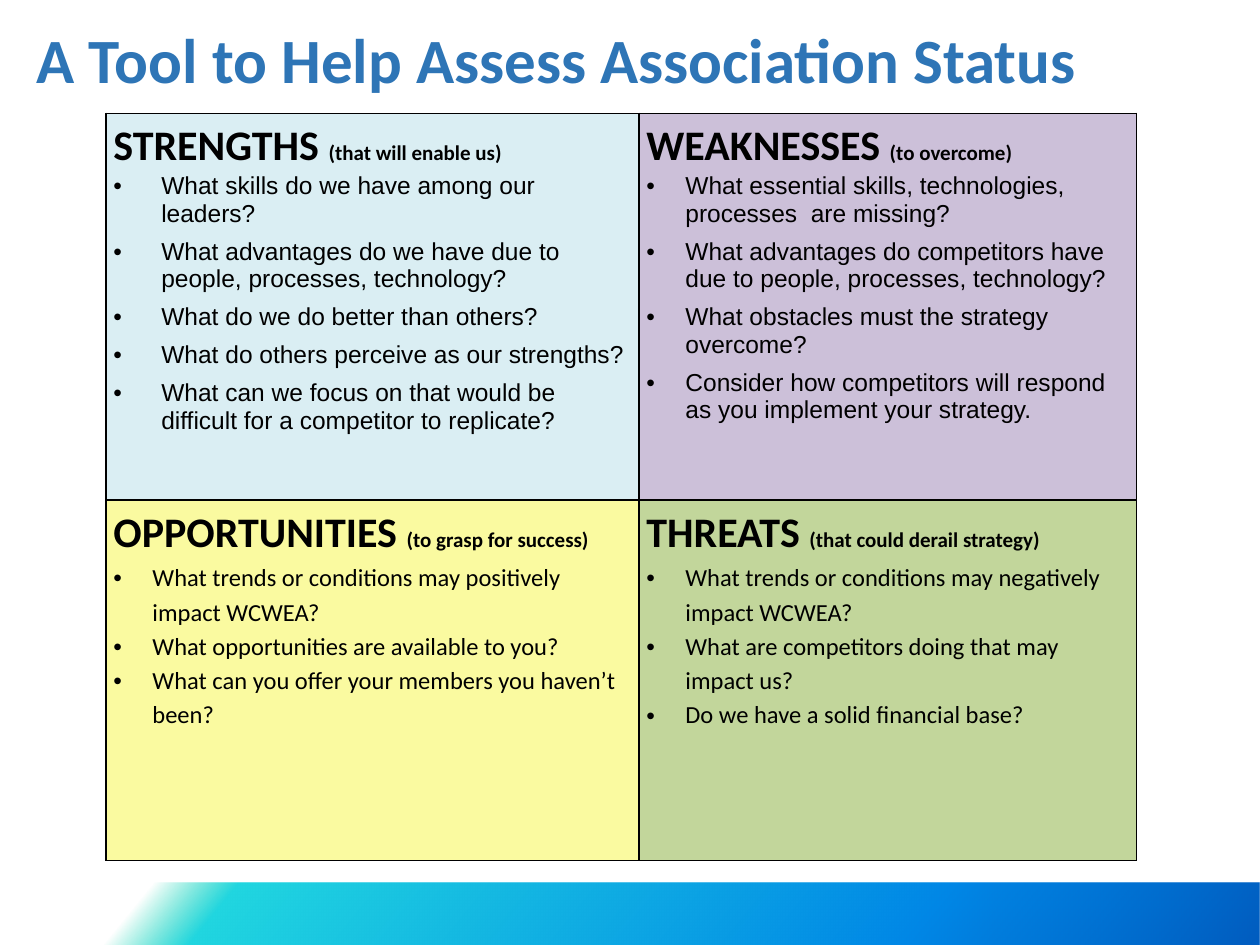
"""Build a four-quadrant SWOT slide for assessing association status."""
from dataclasses import dataclass

from lxml.etree import SubElement
from pptx import Presentation
from pptx.dml.color import RGBColor as Rgb
from pptx.enum.shapes import MSO_SHAPE as Shape
from pptx.enum.text import MSO_ANCHOR as Anchor, PP_ALIGN as Align
from pptx.oxml import parse_xml
from pptx.oxml.ns import nsdecls, qn
from pptx.util import Inches, Pt

COLORS = {
    "title": "2E75B6", "text": "000000", "border": "000000",
    "strengths": "DAEEF3", "weaknesses": "CCC0D9",
    "opportunities": "FAFAA0", "threats": "C2D69B",
}
BAND_STOPS = [(19, "03D4A8", 0), (25, "21D6E0", 100), (75, "0087E6", 100), (100, "005CBF", 100)]
BAND_ANGLE = 40
COLUMN_WIDTHS = [4.23, 3.95]
ROW_HEIGHTS = [3.07, 2.86]
INTERNAL = {"font": "Arial", "spacing": {"space_after": Pt(6)}}
EXTERNAL = {"font": "Calibri", "spacing": {"line_spacing": 1.15}}


@dataclass
class Quadrant:
    """One SWOT cell with its heading, aside and questions."""
    heading: str
    aside: str
    questions: list[str]
    style: dict
    indent: float = 0.31


QUADRANTS = [
    [
        Quadrant("STRENGTHS", "(that will enable us)", [
            "What skills do we have among our leaders?",
            "What advantages do we have due to people, processes, technology?",
            "What do we do better than others?",
            "What do others perceive as our strengths?",
            "What can we focus on that would be difficult for a competitor to replicate?",
        ], INTERNAL, 0.38),
        Quadrant("WEAKNESSES", "(to overcome)", [
            "What essential skills, technologies, processes  are missing?",
            "What advantages do competitors have due to people, processes, technology?",
            "What obstacles must the strategy overcome?",
            "Consider how competitors will respond as you implement your strategy.",
        ], INTERNAL),
    ],
    [
        Quadrant("OPPORTUNITIES", "(to grasp for success)", [
            "What trends or conditions may positively impact WCWEA?",
            "What opportunities are available to you?",
            "What can you offer your members you haven’t been?",
        ], EXTERNAL),
        Quadrant("THREATS", "(that could derail strategy)", [
            "What trends or conditions may negatively impact WCWEA?",
            "What are competitors doing that may impact us?",
            "Do we have a solid financial base?",
        ], EXTERNAL),
    ],
]


def set_all(target, values: dict) -> None:
    """Set every named attribute on the target."""
    for name, value in values.items():
        setattr(target, name, value)


def add_run(paragraph, text: str, size: int, bold: bool,
            font: str = "Calibri", color: str = "text") -> None:
    """Append a formatted run."""
    run = paragraph.add_run()
    run.text = text
    set_all(run.font, {"size": Pt(size), "bold": bold, "name": font})
    run.font.color.rgb = Rgb.from_string(COLORS[color])


def add_bullet(paragraph, indent: float) -> None:
    """Give the paragraph a hanging round bullet."""
    properties = paragraph._p.get_or_add_pPr()
    properties.set("marL", str(Inches(indent)))
    properties.set("indent", str(-Inches(indent)))
    SubElement(properties, qn("a:buFont"), typeface="Arial")
    SubElement(properties, qn("a:buChar"), char="•")


def add_borders(cell) -> None:
    """Outline all four sides of the cell."""
    properties = cell._tc.get_or_add_tcPr()
    for position, side in enumerate("LRTB"):
        properties.insert(position, parse_xml(
            f'<a:ln{side} {nsdecls("a")} w="{Pt(1)}"><a:solidFill>'
            f'<a:srgbClr val="{COLORS["border"]}"/></a:solidFill></a:ln{side}>'))


def fill_quadrant(cell, quadrant: Quadrant) -> None:
    """Write one quadrant into its table cell."""
    set_all(cell, {"margin_left": Inches(0.06), "margin_right": Inches(0.06),
                   "margin_top": 0, "margin_bottom": 0, "vertical_anchor": Anchor.TOP})
    cell.fill.solid()
    cell.fill.fore_color.rgb = Rgb.from_string(COLORS[quadrant.heading.lower()])
    add_borders(cell)
    heading = cell.text_frame.paragraphs[0]
    heading.line_spacing = 1.15
    add_run(heading, f"{quadrant.heading} ", 24, True)
    add_run(heading, quadrant.aside, 12, True)
    for question in quadrant.questions:
        paragraph = cell.text_frame.add_paragraph()
        set_all(paragraph, quadrant.style["spacing"])
        add_bullet(paragraph, quadrant.indent)
        add_run(paragraph, question, 14, False, quadrant.style["font"])


def add_band(slide) -> None:
    """Draw the fading gradient band along the foot of the slide."""
    band = slide.shapes.add_shape(
        Shape.RECTANGLE, Inches(-0.93), Inches(7.01), Inches(10.93), Inches(0.5))
    band.shadow.inherit = False
    band.line.fill.background()
    stops = "".join(
        f'<a:gs pos="{position * 1000}"><a:srgbClr val="{color}">'
        f'<a:alpha val="{opacity * 1000}"/></a:srgbClr></a:gs>'
        for position, color, opacity in BAND_STOPS)
    band._element.spPr.find(qn("a:prstGeom")).addnext(parse_xml(
        f'<a:gradFill {nsdecls("a")} rotWithShape="1"><a:gsLst>{stops}</a:gsLst>'
        f'<a:lin ang="{BAND_ANGLE * 60000}" scaled="0"/></a:gradFill>'))


def add_title(slide, text: str) -> None:
    """Place and format the slide title."""
    title = slide.shapes.title
    set_all(title, {"left": Inches(0.19), "top": Inches(0.01),
                    "width": Inches(8.62), "height": Inches(0.99)})
    set_all(title.text_frame, {"vertical_anchor": Anchor.MIDDLE, "word_wrap": True})
    paragraph = title.text_frame.paragraphs[0]
    set_all(paragraph, {"alignment": Align.LEFT, "line_spacing": 0.9, "space_before": Pt(0)})
    add_run(paragraph, text, 36, True, color="title")


def add_swot_table(slide) -> None:
    """Add the two-by-two SWOT table."""
    table = slide.shapes.add_table(
        len(ROW_HEIGHTS), len(COLUMN_WIDTHS), Inches(0.84), Inches(0.9),
        Inches(sum(COLUMN_WIDTHS)), Inches(sum(ROW_HEIGHTS))).table
    set_all(table, {"first_row": False, "horz_banding": False})
    for column, width in zip(table.columns, COLUMN_WIDTHS):
        column.width = Inches(width)
    for row, height, quadrants in zip(table.rows, ROW_HEIGHTS, QUADRANTS):
        row.height = Inches(height)
        for cell, quadrant in zip(row.cells, quadrants):
            fill_quadrant(cell, quadrant)


def main() -> None:
    """Assemble and save the presentation."""
    deck = Presentation()
    set_all(deck, {"slide_width": Inches(10), "slide_height": Inches(7.5)})
    slide = deck.slides.add_slide(deck.slide_layouts[5])
    add_band(slide)
    add_title(slide, "A Tool to Help Assess Association Status")
    add_swot_table(slide)
    deck.save("out.pptx")


if __name__ == "__main__":
    main()
